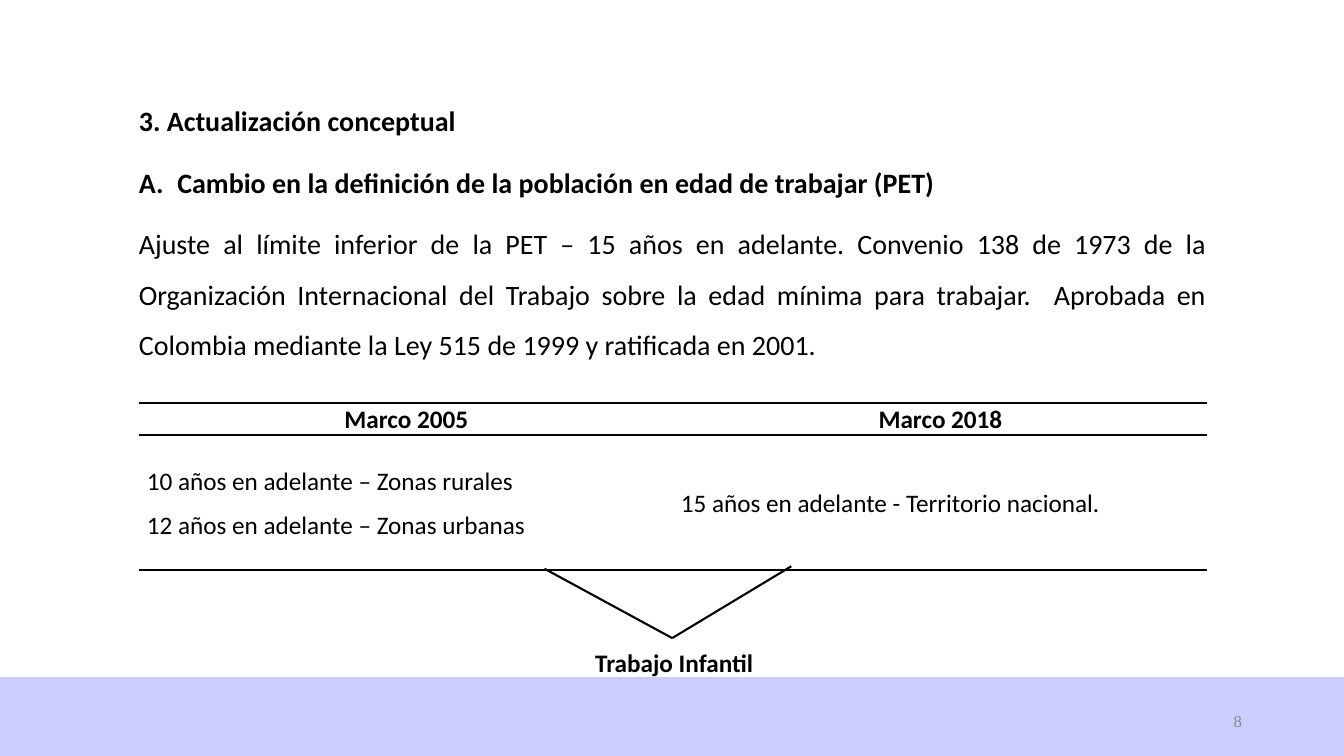
from lxml.etree import SubElement
from pptx import Presentation
from pptx.dml.color import RGBColor
from pptx.enum.shapes import MSO_CONNECTOR, MSO_SHAPE
from pptx.enum.text import MSO_ANCHOR, PP_ALIGN
from pptx.oxml.ns import qn
from pptx.util import Cm, Pt

BLACK, GREY, LAVENDER = "000000", "898989", "CCCCFF"
SLIDE_WIDTH, SLIDE_HEIGHT = 33.87, 19.05
RULE_WIDTH = Pt(1.5)


def color(value):
    return RGBColor.from_string(value)


def add_text(frame, text, size=18, font="Calibri", fill=BLACK, bold=False,
             align=PP_ALIGN.LEFT, line_spacing=None, after=0, letter=False):
    """Append one formatted paragraph, reusing the empty first one."""
    first = frame.paragraphs[0]
    paragraph = frame.add_paragraph() if first.runs else first
    paragraph.alignment = align
    paragraph.line_spacing = line_spacing
    paragraph.space_after = Pt(after)
    if letter:
        properties = paragraph._p.get_or_add_pPr()
        properties.set("marL", str(Cm(0.97)))
        properties.set("indent", str(-Cm(0.97)))
        SubElement(properties, qn("a:buFont"), typeface="+mj-lt")
        SubElement(properties, qn("a:buAutoNum"), type="alphaUcPeriod")
    run = paragraph.add_run()
    run.text = text
    run.font.size = Pt(size)
    run.font.name = font
    run.font.bold = bold
    run.font.color.rgb = color(fill)


def add_frame(slide, left, top, width, height, anchor=MSO_ANCHOR.TOP):
    box = slide.shapes.add_textbox(Cm(left), Cm(top), Cm(width), Cm(height))
    frame = box.text_frame
    frame.word_wrap = True
    frame.vertical_anchor = anchor
    return frame


def set_borders(cell):
    """Rule the cell above and below, and leave its sides open."""
    properties = cell._tc.get_or_add_tcPr()
    for side in ("L", "R", "T", "B"):
        border = SubElement(properties, qn(f"a:ln{side}"), w=str(RULE_WIDTH))
        if side in "TB":
            solid = SubElement(border, qn("a:solidFill"))
            SubElement(solid, qn("a:srgbClr"), val=BLACK)
        else:
            SubElement(border, qn("a:noFill"))


def add_footer(slide, left, top, width, height):
    # Coloured band
    band = slide.shapes.add_shape(MSO_SHAPE.RECTANGLE, Cm(left), Cm(top), Cm(width), Cm(height))
    band.shadow.inherit = False
    band.fill.solid()
    band.fill.fore_color.rgb = color(LAVENDER)
    band.line.color.rgb = color(LAVENDER)
    band.line.width = Pt(1)
    # Page number
    number = add_frame(slide, left + width - 9.94, top + 0.58, 7.62, 1.02, MSO_ANCHOR.MIDDLE)
    add_text(number, "8", size=12, font="Times New Roman", fill=GREY, align=PP_ALIGN.RIGHT)


def add_introduction(slide, left, top, width, height):
    frame = add_frame(slide, left, top, width, height)
    style = dict(size=20, align=PP_ALIGN.JUSTIFY, line_spacing=1.5, after=8)
    add_text(frame, "3. Actualización conceptual", bold=True, **style)
    add_text(frame, "Cambio en la definición de la población en edad de trabajar (PET)",
             bold=True, letter=True, **style)
    add_text(frame, "Ajuste al límite inferior de la PET – 15 años en adelante. "
             "Convenio 138 de 1973 de la Organización Internacional del Trabajo "
             "sobre la edad mínima para trabajar.  Aprobada en Colombia mediante "
             "la Ley 515 de 1999 y ratificada en 2001.", **style)


def add_comparison(slide, left, top, width, height):
    rows = [
        [["Marco 2005"], ["Marco 2018"]],
        [["10 años en adelante – Zonas rurales", "12 años en adelante – Zonas urbanas"],
         ["15 años en adelante - Territorio nacional."]],
    ]
    header_height = 0.74
    table = slide.shapes.add_table(2, 2, Cm(left), Cm(top), Cm(width), Cm(height)).table
    table.first_row = table.horz_banding = False
    table.rows[0].height = Cm(header_height)
    table.rows[1].height = Cm(height - header_height)
    for row_index, row in enumerate(rows):
        header = row_index == 0
        for column_index, lines in enumerate(row):
            cell = table.cell(row_index, column_index)
            set_borders(cell)
            cell.fill.background()
            cell.vertical_anchor = MSO_ANCHOR.MIDDLE
            cell.margin_left = cell.margin_right = Cm(0.19)
            cell.margin_top = cell.margin_bottom = 0
            for line in lines:
                add_text(cell.text_frame, line, bold=header, line_spacing=1.07, after=8,
                         align=PP_ALIGN.CENTER if header else PP_ALIGN.LEFT)


def add_conclusion(slide, left, top, width, height):
    # Two lines meeting above the caption
    points = [(left, top + 0.06), (left + 3.22, top + 1.81), (left + width, top)]
    for start, end in zip(points, points[1:]):
        line = slide.shapes.add_connector(MSO_CONNECTOR.STRAIGHT,
                                          *(Cm(value) for value in start + end))
        line.line.color.rgb = color(BLACK)
        line.line.width = RULE_WIDTH
        SubElement(line._element.spPr, qn("a:effectLst"))
    # Caption
    caption = add_frame(slide, left - 0.16, top + height - 1.02, 6.86, 1.02)
    add_text(caption, "Trabajo Infantil", bold=True, align=PP_ALIGN.CENTER)


def main():
    presentation = Presentation()
    presentation.slide_width = Cm(SLIDE_WIDTH)
    presentation.slide_height = Cm(SLIDE_HEIGHT)
    slide = presentation.slides.add_slide(presentation.slide_layouts[6])
    add_footer(slide, 0, 17.07, SLIDE_WIDTH, SLIDE_HEIGHT - 17.07)
    add_introduction(slide, 3.25, 2.06, 27.41, 7.09)
    add_comparison(slide, 3.51, 10.15, 26.92, 4.14)
    add_conclusion(slide, 13.72, 14.27, 6.22, 2.93)
    presentation.save("out.pptx")


if __name__ == "__main__":
    main()
